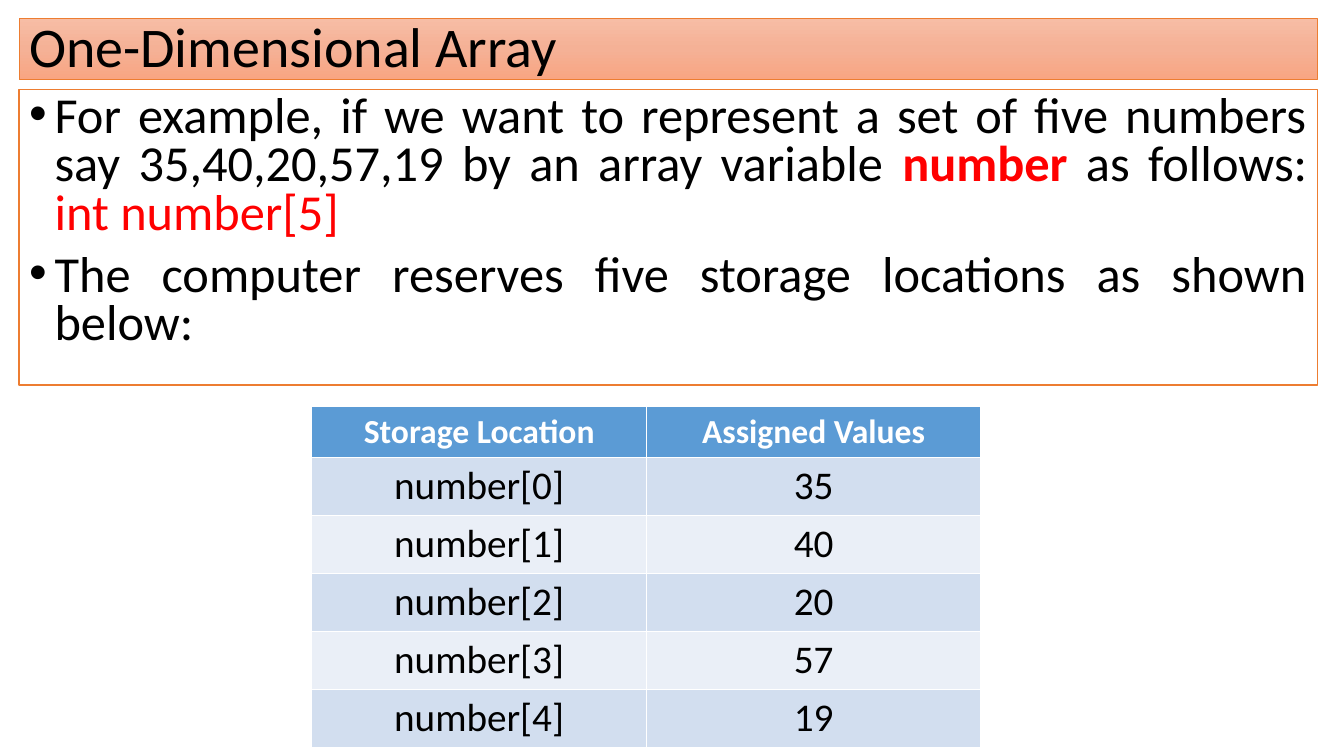
from copy import deepcopy

from pptx import Presentation
from pptx.dml.color import RGBColor
from pptx.enum.text import MSO_ANCHOR, MSO_AUTO_SIZE, PP_ALIGN
from pptx.util import Cm, Pt

LEFT, CENTER, JUSTIFY = PP_ALIGN.LEFT, PP_ALIGN.CENTER, PP_ALIGN.JUSTIFY
TOP, MIDDLE = MSO_ANCHOR.TOP, MSO_ANCHOR.MIDDLE
NO_AUTOFIT = MSO_AUTO_SIZE.NONE

# Content
TITLE = "One-Dimensional Array"
BULLETS = [
    [
        ("For example, if we want to represent a set of five numbers say "
         "35,40,20,57,19 by an array variable ", "black", False),
        ("number", "red", True),
        (" as follows: ", "black", False),
        ("int number[5]", "red", False),
    ],
    [("The computer reserves five storage locations as shown below:", "black", False)],
]
HEADERS = ("Storage Location", "Assigned Values")
VALUES = (35, 40, 20, 57, 19)

# Style
FONT = "Calibri"
COLORS = {
    "black": "000000", "white": "FFFFFF", "red": "FF0000", "orange": "ED7D31",
    "header": "5B9BD5", "band_dark": "D2DEEF", "band_light": "EAEFF7",
}
TITLE_STOPS = [(0, "F7BDA5"), (0.5, "F5B196"), (1, "F8A582")]
BOX_LEFT, BOX_WIDTH = Cm(0.48), Cm(32.72)
TITLE_FORMAT = {"alignment": LEFT, "line_spacing": 0.9}
BULLET_FORMAT = {"alignment": JUSTIFY, "line_spacing": 0.8, "space_before": Pt(10)}
CELL_FORMAT = {"alignment": CENTER}
TABLE_LEFT, TABLE_TOP, COL_WIDTH, ROW_HEIGHT = Cm(7.86), Cm(10.24), Cm(8.43), Cm(1.03)


def rgb(name):
    return RGBColor.from_string(COLORS[name])


def apply(target, values):
    for name, value in values.items():
        setattr(target, name, value)


def write(p, runs, size, layout):
    """Fill a paragraph with (text, color, bold) runs."""
    apply(p, layout)
    for text, color, bold in runs:
        r = p.add_run()
        r.text = text
        apply(r.font, {"name": FONT, "size": Pt(size), "bold": bold})
        r.font.color.rgb = rgb(color)


def place(sp, top, height, line_width, anchor):
    """Position and outline a placeholder."""
    apply(sp, {"left": BOX_LEFT, "top": top, "width": BOX_WIDTH, "height": height})
    sp.line.color.rgb = rgb("orange")
    sp.line.width = Pt(line_width)
    apply(sp.text_frame, {"auto_size": NO_AUTOFIT, "word_wrap": True,
                          "vertical_anchor": anchor})


prs = Presentation()
prs.slide_width, prs.slide_height = Cm(33.87), Cm(19.05)
s = prs.slides.add_slide(prs.slide_layouts[1])
title, body = s.placeholders

# Title bar with a three-stop gradient running downwards
place(title, Cm(0.46), Cm(1.55), 0.5, MIDDLE)
title.fill.gradient()
title.fill.gradient_angle = 270
stop_list = title._element.xpath(".//a:gsLst")[0]
stop_list.insert(1, deepcopy(stop_list[0]))
for stop, (position, color) in zip(title.fill.gradient_stops, TITLE_STOPS):
    stop.position = position
    stop.color.rgb = RGBColor.from_string(color)
write(title.text_frame.paragraphs[0], [(TITLE, "black", False)], 40, TITLE_FORMAT)

# Bulleted text
place(body, Cm(2.26), Cm(7.44), 1, TOP)
body.fill.solid()
body.fill.fore_color.rgb = rgb("white")
tf = body.text_frame
for i, runs in enumerate(BULLETS):
    p = tf.add_paragraph() if i else tf.paragraphs[0]
    write(p, runs, 36, BULLET_FORMAT)
    indent = Cm(0.64)
    pPr = p._p.get_or_add_pPr()
    pPr.set("marL", str(indent))
    pPr.set("indent", str(-indent))

# Table of storage locations
rows = [HEADERS] + [(f"number[{i}]", str(value)) for i, value in enumerate(VALUES)]
table = s.shapes.add_table(len(rows), len(HEADERS), TABLE_LEFT, TABLE_TOP,
                           COL_WIDTH * len(HEADERS), ROW_HEIGHT * len(rows)).table
for i, row in enumerate(rows):
    if i == 0:
        fill, color, size = "header", "white", 24
    else:
        fill, color, size = ("band_dark" if i % 2 else "band_light"), "black", 28
    for j, text in enumerate(row):
        cell = table.cell(i, j)
        cell.fill.solid()
        cell.fill.fore_color.rgb = rgb(fill)
        write(cell.text_frame.paragraphs[0], [(text, color, i == 0)], size, CELL_FORMAT)

prs.save("out.pptx")
